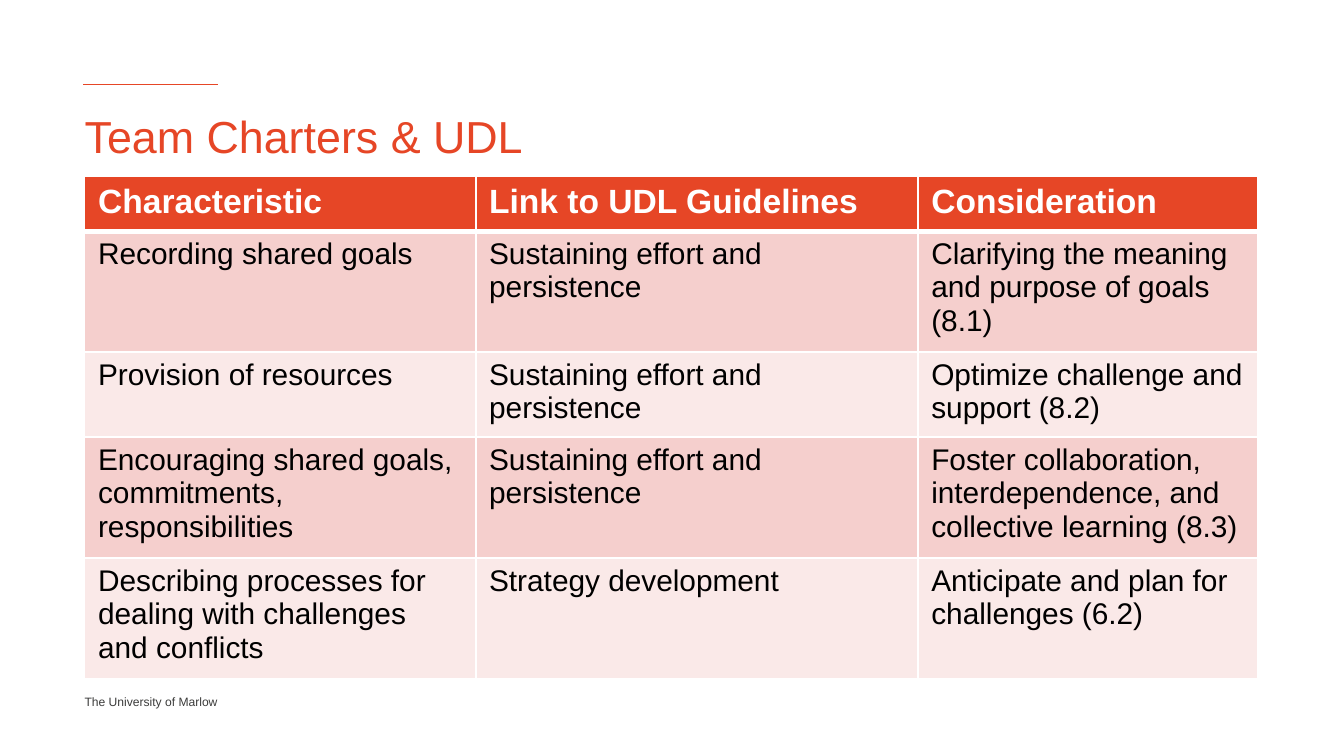
from lxml import etree
from pptx import Presentation
from pptx import util as u
from pptx.dml.color import RGBColor
from pptx.enum import shapes, text
from pptx.oxml import ns

TITLE = "Team Charters & UDL"
FOOTER = "The University of Marlow"
HEADER = ["Characteristic", "Link to UDL Guidelines", "Consideration"]
ROWS = [
    ["Recording shared goals", "Sustaining effort and persistence",
     "Clarifying the meaning and purpose of goals (8.1)"],
    ["Provision of resources", "Sustaining effort and persistence",
     "Optimize challenge and support (8.2)"],
    ["Encouraging shared goals, commitments, responsibilities",
     "Sustaining effort and persistence",
     "Foster collaboration, interdependence, and collective learning (8.3)"],
    ["Describing processes for dealing with challenges and conflicts",
     "Strategy development", "Anticipate and plan for challenges (6.2)"],
]
COLORS = {"accent": "E64626", "dark_band": "F5CFCD", "light_band": "FAE9E8",
          "white": "FFFFFF", "black": "000000", "footer": "3C3C3B"}
FONT = "Arial"
WIDTH = 10
HEIGHT = WIDTH * 9 / 16
MARGIN = 0.63
COLUMNS = [2.91, 3.29, 2.53]
ROW_HEIGHT = 0.41
TABLE_HEIGHT = 3.74


def color(name):
    return RGBColor.from_string(COLORS[name])


def add_span(para, words, size, name, bold=False):
    span = para.add_run()
    span.text = words
    span.font.name = FONT
    span.font.size = u.Pt(size)
    span.font.bold = bold
    span.font.color.rgb = color(name)


def add_label(page, words, place, size, name):
    box = page.shapes.add_textbox(*[u.Inches(n) for n in place])
    frame = box.text_frame
    frame.word_wrap = True
    frame.vertical_anchor = text.MSO_ANCHOR.TOP
    frame.margin_left = frame.margin_right = 0
    frame.margin_top = frame.margin_bottom = 0
    add_span(frame.paragraphs[0], words, size, name)


def add_rule(page):
    left, right, top = [u.Inches(n) for n in (0.62, 1.62, 0.63)]
    rule = page.shapes.add_connector(
        shapes.MSO_CONNECTOR.STRAIGHT, right, top, left, top)
    rule.line.color.rgb = color("accent")
    rule.line.width = u.Pt(0.75)
    etree.SubElement(rule._element.spPr, ns.qn("a:effectLst"))


def add_borders(cell, widths):
    """Draw white borders; widths maps each side (L, R, T, B) to points."""
    props = cell._tc.get_or_add_tcPr()
    for side, points in widths.items():
        line = etree.SubElement(props, ns.qn(f"a:ln{side}"), w=str(u.Pt(points)))
        fill = etree.SubElement(line, ns.qn("a:solidFill"))
        etree.SubElement(fill, ns.qn("a:srgbClr"), val=COLORS["white"])


def add_charter_table(page):
    lines = [HEADER] + ROWS
    frame = page.shapes.add_table(
        len(lines), len(COLUMNS), u.Inches(MARGIN), u.Inches(1.31),
        u.Inches(sum(COLUMNS)), u.Inches(TABLE_HEIGHT))
    table = frame.table
    for column, width in zip(table.columns, COLUMNS):
        column.width = u.Inches(width)
    for r, line in enumerate(lines):
        table.rows[r].height = u.Inches(ROW_HEIGHT)
        if r == 0:
            band, size, ink = "accent", 18, "white"
        else:
            band, size, ink = ("dark_band" if r % 2 else "light_band"), 16, "black"
        for c, words in enumerate(line):
            cell = table.cell(r, c)
            add_borders(cell, {"L": 1, "R": 1, "T": 3 if r == 1 else 1,
                               "B": 3 if r == 0 else 1})
            cell.fill.solid()
            cell.fill.fore_color.rgb = color(band)
            add_span(cell.text_frame.paragraphs[0], words, size, ink, r == 0)
    # Rows grow with their text, so the frame is taller than the row minimums.
    frame.height = u.Inches(TABLE_HEIGHT)


def main():
    deck = Presentation()
    deck.slide_width, deck.slide_height = u.Inches(WIDTH), u.Inches(HEIGHT)
    page = deck.slides.add_slide(deck.slide_layouts[6])
    add_label(page, FOOTER, (MARGIN, 5.17, 1.03, 0.13), 6.5, "footer")
    add_rule(page)
    add_label(page, TITLE, (MARGIN, 0.81, sum(COLUMNS), 0.4), 24, "accent")
    add_charter_table(page)
    deck.save("out.pptx")


if __name__ == "__main__":
    main()
